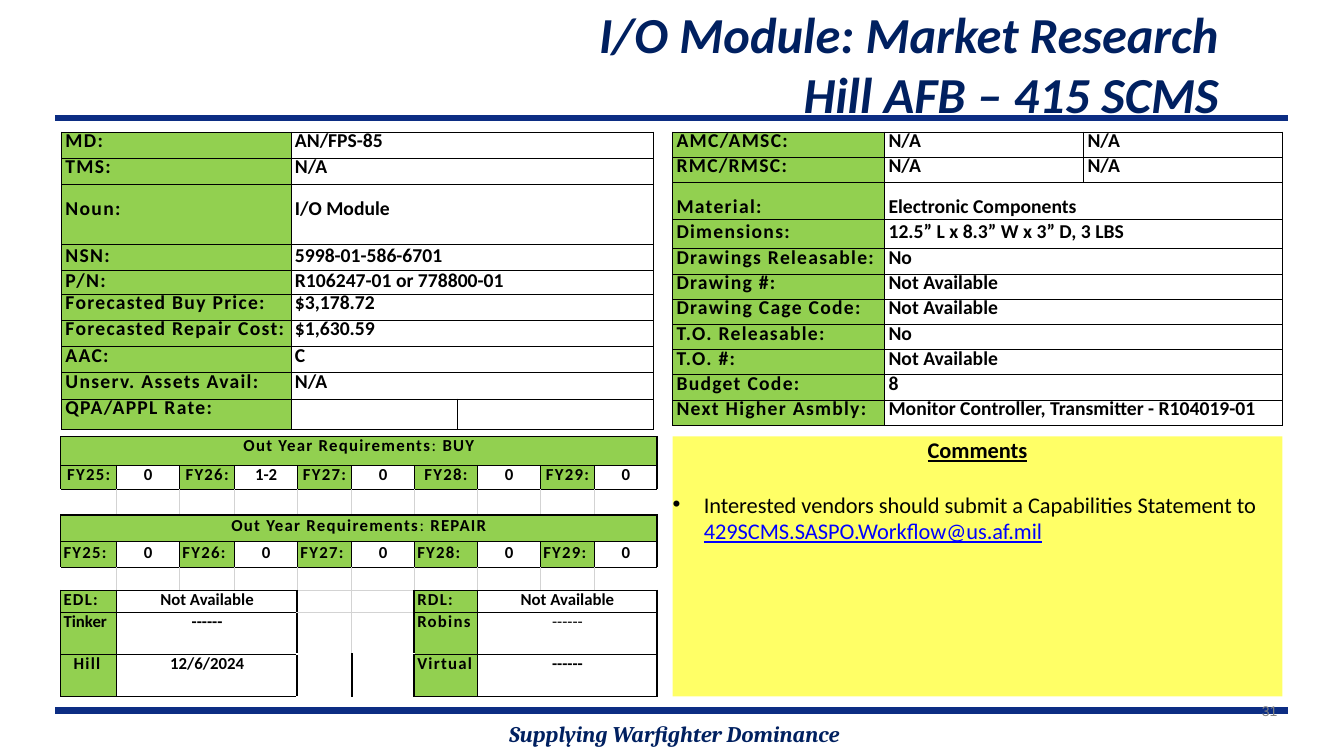
from dataclasses import dataclass
from lxml.etree import SubElement
from pptx import Presentation
from pptx.dml.color import RGBColor
from pptx.enum.shapes import MSO_CONNECTOR, MSO_SHAPE
from pptx.enum.text import MSO_ANCHOR, PP_ALIGN
from pptx.oxml.ns import qn
from pptx.util import Inches, Pt


@dataclass(frozen=True)
class Theme:
    """Colours, fonts and type sizes of the deck."""
    navy: str = "002060"
    rule: str = "0C2D83"
    green: str = "92D050"
    yellow: str = "FFFF66"
    black: str = "000000"
    link: str = "0000FF"
    gray: str = "808080"
    pale: str = "D3D3D3"
    body: str = "Calibri"
    title: int = 36
    comment: int = 16
    fact: int = 14
    plan: int = 12
    number: int = 10


@dataclass(frozen=True)
class Box:
    """A region of the page in inches."""
    left: float
    top: float
    width: float
    height: float

    def emu(self):
        """Return the region in drawing units."""
        return [Inches(n) for n in (self.left, self.top, self.width, self.height)]


THEME = Theme()
THIN, MEDIUM, THICK = ((THEME.black, width) for width in (0.75, 1, 1.5))
PALE = (THEME.pale, 0.75)
FRAME = dict(L=THIN, T=THIN, R=THIN, B=THIN)
LEFT_FACTS = [
    ("MD:", "AN/FPS-85"), ("TMS:", "N/A"), ("Noun:", "I/O Module"),
    ("NSN:", "5998-01-586-6701"), ("P/N:", "R106247-01 or 778800-01"),
    ("Forecasted Buy Price:", "$3,178.72"), ("Forecasted Repair Cost:", "$1,630.59"),
    ("AAC:", "C"), ("Unserv. Assets Avail:", "N/A"), ("QPA/APPL Rate:", "", ""),
]
RIGHT_FACTS = [
    ("AMC/AMSC:", "N/A", "N/A"), ("RMC/RMSC:", "N/A", "N/A"),
    ("Material:", "Electronic Components"), ("Dimensions:", "12.5” L x 8.3” W x 3” D, 3 LBS"),
    ("Drawings Releasable:", "No"), ("Drawing #:", "Not Available"),
    ("Drawing Cage Code:", "Not Available"), ("T.O. Releasable:", "No"),
    ("T.O. #:", "Not Available"), ("Budget Code:", "8"),
    ("Next Higher Asmbly:", "Monitor Controller, Transmitter - R104019-01"),
]
YEARS = ["FY25:", "FY26:", "FY27:", "FY28:", "FY29:"]
PLANS = [(0, "BUY", ["0", "1-2", "0", "0", "0"]), (3, "REPAIR", ["0"] * 5)]
SITES = [("EDL:", "Not Available", "RDL:", "Not Available"),
         ("Tinker", "------", "Robins", "------"),
         ("Hill", "12/6/2024", "Virtual", "------")]


def style(font, size, color=THEME.black, bold=True, italic=False, name=THEME.body):
    """Set the look of a font."""
    font.name, font.size, font.bold, font.italic = name, Pt(size), bold, italic
    font.color.rgb = RGBColor.from_string(color)


def add_span(para, text, spacing=0):
    """Add a run with letter spacing in points."""
    span = para.add_run()
    span.text = text
    if spacing:
        span.font._element.set("spc", str(int(spacing * 100)))
    return span


def add_text(page, box, text, align, inset=0, **look):
    """Place a single styled paragraph in a text box."""
    frame = page.shapes.add_textbox(*box.emu()).text_frame
    frame.word_wrap = True
    frame.margin_left = frame.margin_right = Inches(2 * inset)
    frame.margin_top = frame.margin_bottom = Inches(inset)
    para = frame.paragraphs[0]
    para.text, para.alignment = text, align
    style(para.font, **look)


def add_rule(page, box):
    """Draw a heavy rule along the top of the box."""
    left, top, width, _ = box.emu()
    line = page.shapes.add_connector(MSO_CONNECTOR.STRAIGHT, left, top, left + width, top)
    line.line.color.rgb = RGBColor.from_string(THEME.rule)
    line.line.width = Pt(4.56)
    SubElement(line._element.spPr, qn("a:effectLst"))


def add_grid(page, box, columns, rows):
    """Add a plain table whose tracks share the box by weight."""
    table = page.shapes.add_table(len(rows), len(columns), *box.emu()).table
    table.first_row = table.horz_banding = False
    for track, weight in zip(table.columns, columns):
        track.width = Inches(box.width * weight / sum(columns))
    for track, weight in zip(table.rows, rows):
        track.height = Inches(box.height * weight / sum(rows))
    return table


def fill_cell(cell, spans=(), size=THEME.plan, edges=FRAME, label=False, bold=True,
              align=PP_ALIGN.LEFT, indent=0.0, top=0.0, leading=14.0):
    """Give a cell its borders, fill and text spans of (text, bold)."""
    properties = cell._tc.get_or_add_tcPr()
    for side in "LRTB":
        if side in edges:
            color, width = edges[side]
            line = SubElement(properties, qn(f"a:ln{side}"), w=str(Pt(width)))
            SubElement(SubElement(line, qn("a:solidFill")), qn("a:srgbClr"), val=color)
    if label:
        cell.fill.solid()
        cell.fill.fore_color.rgb = RGBColor.from_string(THEME.green)
    else:
        cell.fill.background()
    cell.margin_left, cell.margin_top = Inches(indent), Inches(top)
    cell.margin_right = cell.margin_bottom = 0
    cell.vertical_anchor = MSO_ANCHOR.TOP
    para = cell.text_frame.paragraphs[0]
    para.alignment, para.line_spacing = align, Pt(leading)
    style(para.font, size, bold=bold)
    for text, heavy in ([(spans, bold)] if isinstance(spans, str) else spans):
        span = add_span(para, text, 0.9 if label and text != "Tinker" else 0)
        if heavy != bold:
            span.font.bold = heavy
    if not spans:
        SubElement(para._p, qn("a:endParaRPr"), sz=str(size * 100))


def fact_table(page, box, columns, rows, facts, tops, leadings):
    """Build a table of labels with one or two values each."""
    table = add_grid(page, box, columns, rows)
    for row, fact in enumerate(facts):
        if len(fact) == 2:
            table.cell(row, 1).merge(table.cell(row, 2))
        for column in range(3):
            fill_cell(table.cell(row, column), fact[column] if column < len(fact) else "",
                      size=THEME.fact, label=column == 0, indent=0.04,
                      top=tops.get(row, 0), leading=leadings.get(row, 14.8))


def plan_table(page, box):
    """Build the yearly requirements with the sites below them."""
    table = add_grid(page, box, (56, 62, 55, 62, 54, 62, 63, 62, 54, 62),
                     (29, 24, 25, 26, 26, 23, 22, 41, 42))
    center = PP_ALIGN.CENTER
    for row, kind, amounts in PLANS:
        table.cell(row, 0).merge(table.cell(row, 9))
        heading = [("Out Year Requirements", True), (": ", False), (kind, True)]
        for column in range(10):
            fill_cell(table.cell(row, column), heading if column == 0 else (), label=True,
                      edges=FRAME | dict(R=THICK), align=center, top=row / 300)
            year, part = divmod(column, 2)
            fill_cell(table.cell(row + 1, column), amounts[year] if part else YEARS[year],
                      label=not part, top=row / 150, align=center if part or not row else PP_ALIGN.LEFT,
                      indent=0 if part or not row else 0.03,
                      edges=FRAME | dict(B=MEDIUM, R=THICK if column == 9 else THIN))
            edges = dict(T=MEDIUM, B=PALE if row and column in (4, 5) else MEDIUM)
            edges |= dict(L=PALE) if column > 0 else {}
            edges |= dict(R=PALE) if column < 9 else {}
            fill_cell(table.cell(row + 2, column), size=THEME.number, edges=edges)
    for row, site in enumerate(SITES, 6):
        for first, (label, value) in ((0, site[:2]), (6, site[2:])):
            fill_cell(table.cell(row, first), label, label=True, indent=0.13 if label == "Hill" else 0.03,
                      edges=FRAME | dict(L=THICK if first else THIN))
            table.cell(row, first + 1).merge(table.cell(row, first + 3))
            for column in range(first + 1, first + 4):
                fill_cell(table.cell(row, column), value if column == first + 1 else "",
                          edges=FRAME | dict(R=THICK), align=center, bold=label != "Robins")
        last = row == 8
        inner = {} if last else dict(T=PALE, B=PALE)
        divider = {} if last else dict(R=PALE)
        fill_cell(table.cell(row, 4), edges=inner | divider | dict(L=THICK))
        fill_cell(table.cell(row, 5), edges=inner | dict(R=THICK) | ({} if last else dict(L=PALE)))


def comment_panel(page, box):
    """Build the panel of comments."""
    panel = page.shapes.add_shape(MSO_SHAPE.RECTANGLE, *box.emu())
    panel.shadow.inherit = False
    panel.fill.solid()
    panel.fill.fore_color.rgb = RGBColor.from_string(THEME.yellow)
    panel.line.fill.background()
    frame = panel.text_frame
    frame.word_wrap, frame.vertical_anchor = True, MSO_ANCHOR.TOP
    frame.margin_left = frame.margin_right = frame.margin_top = frame.margin_bottom = 0
    heading, para = frame.paragraphs[0], frame.add_paragraph()
    heading.text, heading.alignment = "Comments", PP_ALIGN.CENTER
    style(heading.font, THEME.comment)
    heading.font.underline = True
    para.alignment, para.space_before = PP_ALIGN.LEFT, Pt(19.5)
    properties = para._p.get_or_add_pPr()
    properties.set("marL", str(Inches(0.31)))
    properties.set("indent", str(-Inches(0.31)))
    SubElement(properties, qn("a:buFont"), typeface="Arial")
    SubElement(properties, qn("a:buChar"), char="•")
    style(para.font, THEME.comment, bold=False)
    add_span(para, "Interested vendors should submit a Capabilities Statement to ")
    address = add_span(para, "429SCMS.SASPO.Workflow@us.af.mil")
    address.font.underline = True
    address.font.color.rgb = RGBColor.from_string(THEME.link)


def page_frame(page):
    """Place the title, rules, footer and page number."""
    for top in (1.17, 7.05):
        add_rule(page, Box(0.55, top, 12.22, 0))
    add_text(page, Box(1.25, 0.03, 10.84, 1.21), "I/O Module: Market Research\vHill AFB – 415 SCMS",
             PP_ALIGN.RIGHT, size=THEME.title, color=THEME.navy, italic=True)
    add_text(page, Box(1.91, 7.1, 9.56, 0.37), "Supplying Warfighter Dominance", PP_ALIGN.CENTER,
             inset=0.05, size=THEME.comment, color=THEME.navy, italic=True, name="Cambria")
    add_text(page, Box(9.6, 6.97, 3.07, 0.38), "31", PP_ALIGN.RIGHT,
             size=THEME.number, color=THEME.gray, bold=False, name="Arial")


def main():
    """Build and save the deck."""
    deck = Presentation()
    deck.slide_width, deck.slide_height = Inches(13.33), Inches(7.5)
    page = deck.slides.add_slide(deck.slide_layouts[6])
    page_frame(page)
    fact_table(page, Box(0.61, 1.31, 5.87, 2.91), (228, 165, 195),
               (26, 26, 60, 25, 24) + (26,) * 5, LEFT_FACTS, {2: 0.12}, {2: 17, 3: 16.3, 4: 16.3})
    fact_table(page, Box(6.67, 1.31, 6.05, 2.91), (210, 197, 197),
               (25, 25, 37, 29) + (25,) * 7, RIGHT_FACTS, {2: 0.12}, {2: 17, 3: 17})
    plan_table(page, Box(0.6, 4.33, 5.92, 2.58))
    comment_panel(page, Box(6.67, 4.33, 6.05, 2.58))
    deck.save("out.pptx")


if __name__ == "__main__":
    main()
